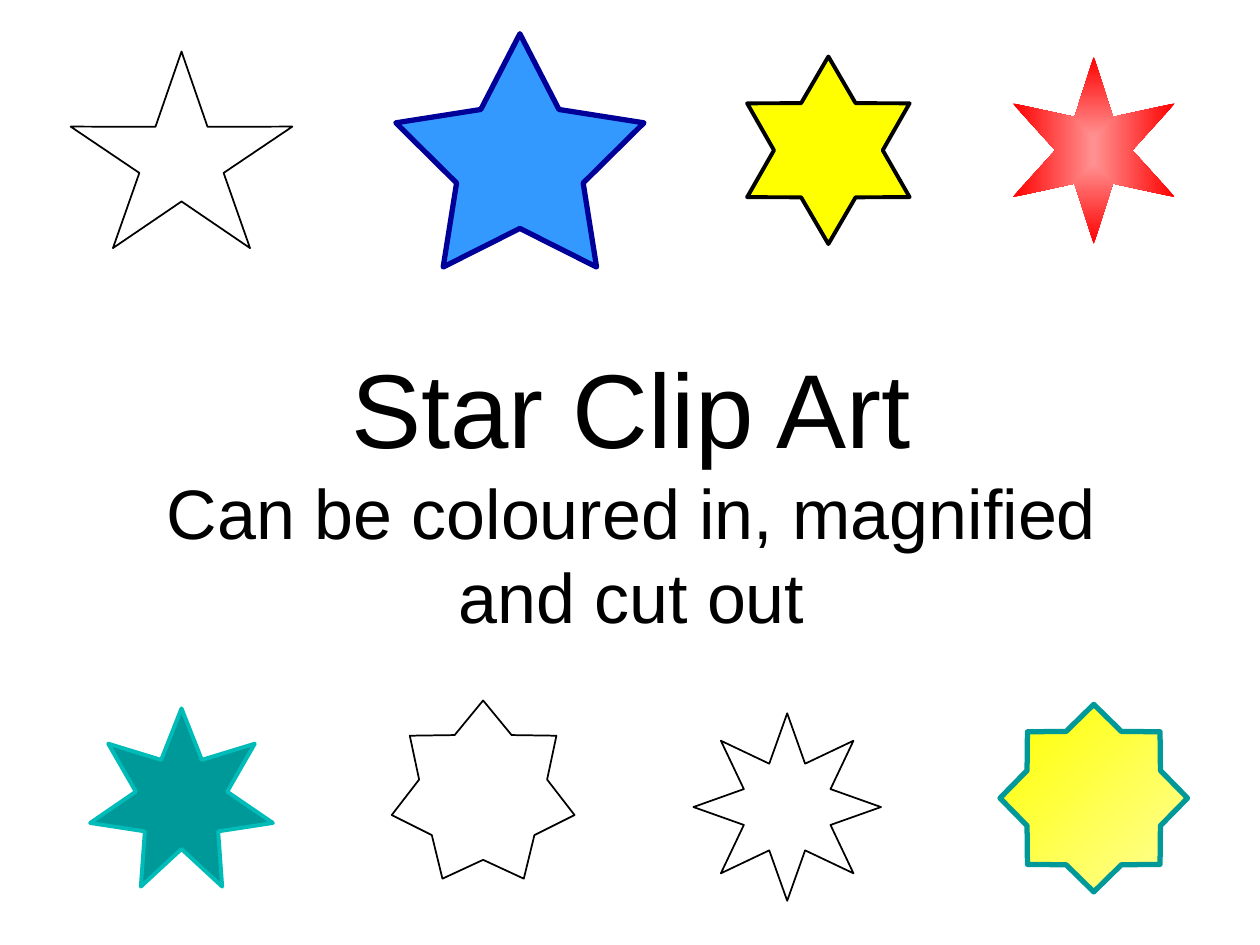
import math

from lxml import etree
from pptx import Presentation
from pptx.dml.color import RGBColor
from pptx.enum import text
from pptx.oxml import ns
from pptx.util import Cm, Pt

BLACK = RGBColor(0x00, 0x00, 0x00)
WHITE = RGBColor(0xFF, 0xFF, 0xFF)
BLUE = RGBColor(0x33, 0x99, 0xFF)
NAVY = RGBColor(0x00, 0x00, 0x99)
YELLOW = RGBColor(0xFF, 0xFF, 0x00)
PALE_YELLOW = RGBColor(0xFF, 0xFF, 0x99)
RED = RGBColor(0xFF, 0x00, 0x00)
PINK = RGBColor(0xFF, 0x93, 0x93)
TEAL = RGBColor(0x00, 0x99, 0x99)
AQUA = RGBColor(0x00, 0xBC, 0xB8)
RADIUS = 1.89


def add_run(p, words, size, font="Arial", color=BLACK):
    """Append a formatted run to a paragraph."""
    r = p.add_run()
    r.text = words
    r.font.size = Pt(size)
    r.font.name = font
    r.font.color.rgb = color


def add_title(s):
    """Fill the title placeholder with a heading and a smaller line."""
    sp = s.shapes.title
    sp.left, sp.top, sp.width, sp.height = Cm(1.93), Cm(7.85), Cm(21.59), Cm(4.09)
    tf = sp.text_frame
    tf.word_wrap = True
    tf.auto_size = text.MSO_AUTO_SIZE.NONE
    tf.vertical_anchor = text.MSO_ANCHOR.MIDDLE
    p = tf.paragraphs[0]
    p.alignment = text.PP_ALIGN.CENTER
    add_run(p, "Star Clip Art", 60)
    p.add_line_break()
    add_run(p, "Can be coloured in, magnified and cut out", 40)


def add_star(s, points, cx, cy, inner, rx=RADIUS, ry=RADIUS, fill=None, line=BLACK, weight=1):
    """Draw a star whose inner corners lie at a fraction of its radius."""
    corners = []
    for i in range(2 * points):
        angle = math.pi * i / points
        scale = inner if i % 2 else 1
        corners.append((Cm(cx + scale * rx * math.sin(angle)),
                        Cm(cy - scale * ry * math.cos(angle))))
    builder = s.shapes.build_freeform(*corners[0])
    builder.add_line_segments(corners[1:], close=True)
    sp = builder.convert_to_shape()
    sp.shadow.inherit = False
    if fill is None:
        sp.fill.background()
    else:
        sp.fill.solid()
        sp.fill.fore_color.rgb = fill
    if line is None:
        sp.line.fill.background()
    else:
        sp.line.color.rgb = line
        sp.line.width = Pt(weight)
    return sp


def set_gradient(sp, start, end, angle=315):
    """Give a shape a linear gradient between two colours."""
    sp.fill.gradient()
    sp.fill.gradient_angle = angle
    for stop, color, position in zip(sp.fill.gradient_stops, (start, end), (0, 1)):
        stop.color.rgb = color
        stop.position = position


def spread_from_centre(sp):
    """Turn a linear gradient into a rectangular one."""
    lin = sp._element.spPr.find(ns.qn("a:gradFill")).find(ns.qn("a:lin"))
    rect = etree.Element(ns.qn("a:path"), {"path": "rect"})
    etree.SubElement(rect, ns.qn("a:fillToRect"), dict.fromkeys("ltrb", "50000"))
    lin.getparent().replace(lin, rect)


def main():
    """Build the slide of stars."""
    prs = Presentation()
    prs.slide_width, prs.slide_height = Cm(25.4), Cm(19.05)
    s = prs.slides.add_slide(prs.slide_layouts[0])
    subtitle = s.placeholders[1]._element
    subtitle.getparent().remove(subtitle)

    add_star(s, 5, 10.48, 3.28, 0.51, rx=2.63, ry=2.6, fill=BLUE, line=NAVY, weight=3)
    add_star(s, 5, 3.66, 3.23, 0.38, rx=2.35, ry=2.19)
    red_star = add_star(s, 6, 22.05, 3.03, 0.41, line=None)
    set_gradient(red_star, PINK, RED)
    spread_from_centre(red_star)
    add_star(s, 6, 16.7, 3.03, 0.58, fill=YELLOW, weight=2.25)
    add_star(s, 7, 9.74, 16.01, 0.7, fill=WHITE)
    add_star(s, 8, 15.87, 16.27, 0.5, fill=WHITE)
    add_star(s, 7, 3.66, 16.17, 0.5, fill=TEAL, line=AQUA, weight=2.25)
    yellow_star = add_star(s, 8, 22.05, 16.09, 0.77, line=TEAL, weight=3)
    set_gradient(yellow_star, YELLOW, PALE_YELLOW)
    add_title(s)
    prs.save("out.pptx")


if __name__ == "__main__":
    main()
